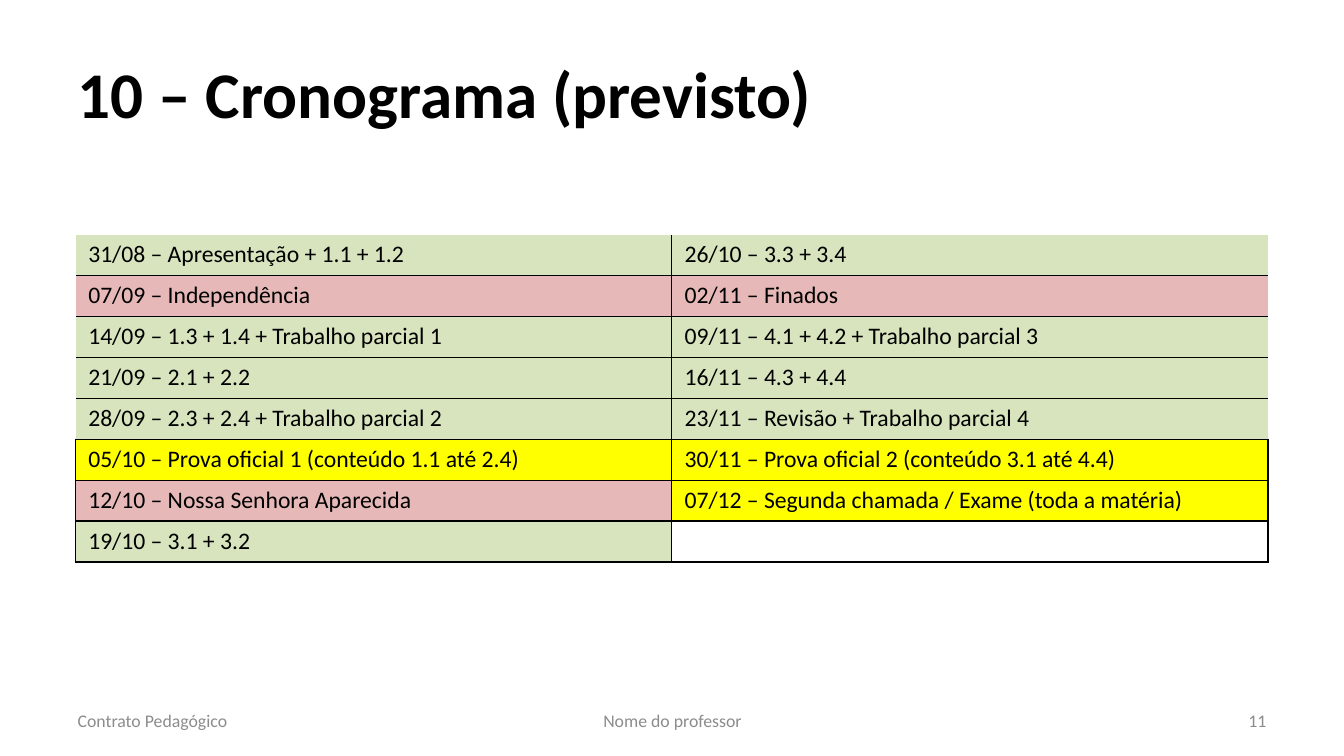
from lxml import etree
from pptx import Presentation
from pptx.dml.color import RGBColor
from pptx.enum import text as t
from pptx.oxml import ns
from pptx.util import Pt

CLASS, HOLIDAY, EXAM, FREE = "D7E4BD", "E6B9B8", "FFFF00", "FFFFFF"
BLACK, GREY = "000000", "8C8C8C"


def add_run(paragraph, wording, size, color, bold=False):
    run = paragraph.add_run()
    run.text = wording
    run.font.name = "Calibri"
    run.font.size = Pt(size)
    run.font.bold = bold
    run.font.color.rgb = RGBColor.from_string(color)


def add_border(cell, side, visible):
    """Draw one edge (L, R, T or B) of a cell, or leave it blank."""
    props = cell._tc.get_or_add_tcPr()
    line = etree.SubElement(props, ns.qn(f"a:ln{side}"), w=str(Pt(1)))
    if visible:
        fill = etree.SubElement(line, ns.qn("a:solidFill"))
        etree.SubElement(fill, ns.qn("a:srgbClr"), val=BLACK)
    else:
        etree.SubElement(line, ns.qn("a:noFill"))


prs = Presentation()
prs.slide_width, prs.slide_height = Pt(907.2), Pt(510.48)
slide = prs.slides.add_slide(prs.slide_layouts[5])

# Title
title = slide.shapes.title
title.left, title.top, title.width, title.height = Pt(45.36), Pt(20.16), Pt(816.48), Pt(84.96)
title.text_frame.vertical_anchor = t.MSO_ANCHOR.MIDDLE
heading = title.text_frame.paragraphs[0]
heading.alignment = t.PP_ALIGN.LEFT
add_run(heading, "10 – Cronograma (previsto)", 44, BLACK, bold=True)

# Schedule: first half of the term on the left, second half on the right
first_half = [
    ("31/08 – Apresentação + 1.1 + 1.2", CLASS),
    ("07/09 – Independência", HOLIDAY),
    ("14/09 – 1.3 + 1.4 + Trabalho parcial 1", CLASS),
    ("21/09 – 2.1 + 2.2", CLASS),
    ("28/09 – 2.3 + 2.4 + Trabalho parcial 2", CLASS),
    ("05/10 – Prova oficial 1 (conteúdo 1.1 até 2.4)", EXAM),
    ("12/10 – Nossa Senhora Aparecida", HOLIDAY),
    ("19/10 – 3.1 + 3.2", CLASS),
]
second_half = [
    ("26/10 – 3.3 + 3.4", CLASS),
    ("02/11 – Finados", HOLIDAY),
    ("09/11 – 4.1 + 4.2 + Trabalho parcial 3", CLASS),
    ("16/11 – 4.3 + 4.4", CLASS),
    ("23/11 – Revisão + Trabalho parcial 4", CLASS),
    ("30/11 – Prova oficial 2 (conteúdo 3.1 até 4.4)", EXAM),
    ("07/12 – Segunda chamada / Exame (toda a matéria)", EXAM),
    ("", FREE),
]
weeks = len(first_half)
first_framed_week = 5  # the outer frame starts at the exam row
row_height = 27.63
schedule = slide.shapes.add_table(
    weeks, 2, Pt(51), Pt(158.6), Pt(805), Pt(row_height * weeks)).table
for row in schedule.rows:
    row.height = Pt(row_height)

for col, half in enumerate((first_half, second_half)):
    for week, (entry, color) in enumerate(half):
        cell = schedule.cell(week, col)
        framed = week >= first_framed_week
        add_border(cell, "L", framed or col == 1)
        add_border(cell, "R", framed or col == 0)
        add_border(cell, "T", week > 0)
        add_border(cell, "B", True)
        cell.fill.solid()
        cell.fill.fore_color.rgb = RGBColor.from_string(color)
        cell.margin_left = cell.margin_right = Pt(8.64)
        cell.margin_top = cell.margin_bottom = Pt(3.6 if entry else 0)
        if entry:
            add_run(cell.text_frame.paragraphs[0], entry, 16, BLACK)

# Footer
for wording, left, width, alignment in (
    ("Contrato Pedagógico", 45.36, 211.68, t.PP_ALIGN.LEFT),
    ("Nome do professor", 310.32, 287.28, t.PP_ALIGN.CENTER),
    ("11", 650.16, 211.68, t.PP_ALIGN.RIGHT),
):
    footer = slide.shapes.add_textbox(Pt(left), Pt(473.04), Pt(width), Pt(27.36)).text_frame
    footer.word_wrap = True
    footer.vertical_anchor = t.MSO_ANCHOR.MIDDLE
    footer.paragraphs[0].alignment = alignment
    add_run(footer.paragraphs[0], wording, 12, GREY)

prs.save("out.pptx")
